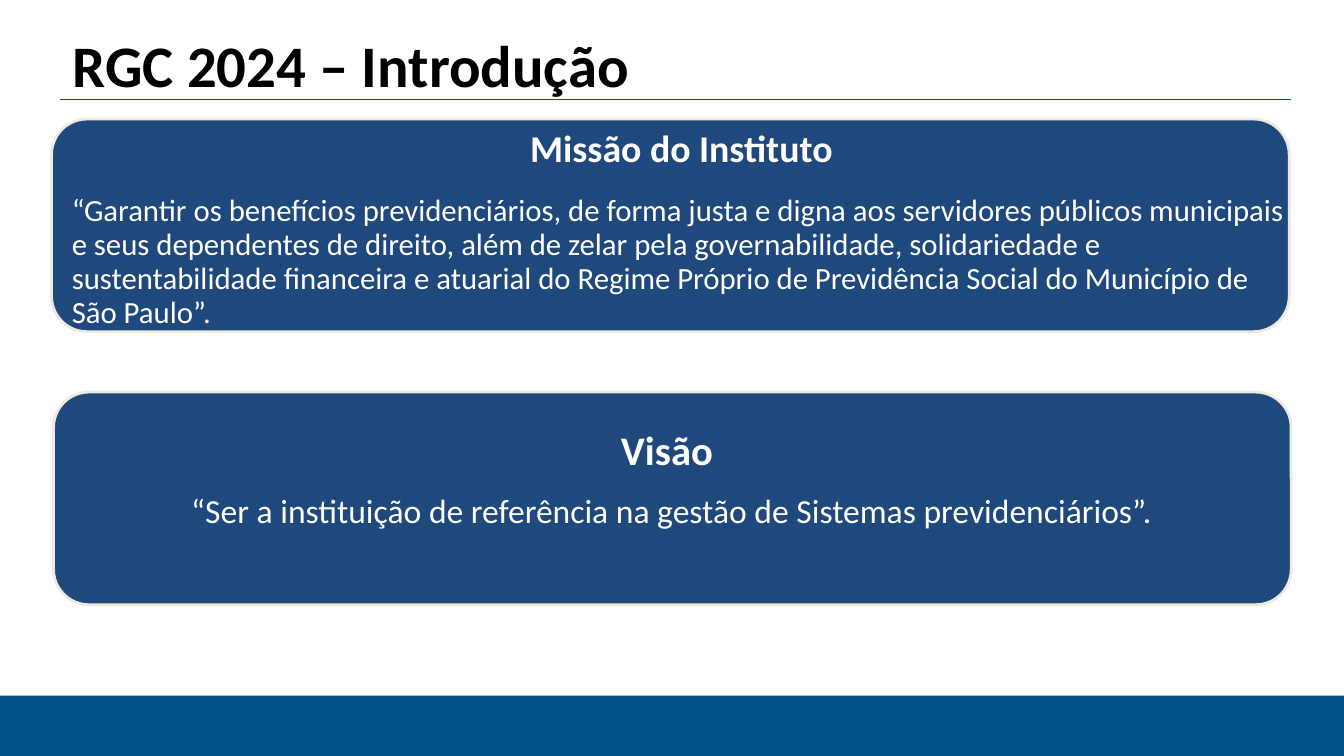
from lxml import etree
from pptx import Presentation, util as u
from pptx.dml.color import RGBColor
from pptx.enum import shapes, text
from pptx.oxml.ns import qn

COLORS = {"blue": "005386", "panel": "1F487C", "border": "EDEBE0",
          "white": "FFFFFF", "black": "000000"}
LEFT, CENTER = text.PP_ALIGN.LEFT, text.PP_ALIGN.CENTER
SHAPE = shapes.MSO_SHAPE


class Deck:
    """Hold the style and the current slide, and draw its elements."""

    def __init__(self, font="Calibri"):
        self.font = font
        self.prs = Presentation()
        self.prs.slide_width, self.prs.slide_height = u.Cm(33.87), u.Cm(19.05)
        self.s = self.prs.slides.add_slide(self.prs.slide_layouts[6])

    def color(self, name):
        return RGBColor.from_string(COLORS[name])

    def box(self, kind, at, fill, border=None):
        sp = self.s.shapes.add_shape(kind, *map(u.Cm, at))
        sp.shadow.inherit = False
        sp.fill.solid()
        sp.fill.fore_color.rgb = self.color(fill)
        if border:
            sp.line.color.rgb = self.color(border)
            sp.line.width = u.Pt(2)
        else:
            sp.line.fill.background()

    def rule(self, x1, x2, y, color):
        c = self.s.shapes.add_connector(
            shapes.MSO_CONNECTOR.STRAIGHT, u.Cm(x1), u.Cm(y), u.Cm(x2), u.Cm(y))
        c.line.color.rgb = self.color(color)
        c.line.width = u.Pt(0.75)
        etree.SubElement(c.element.spPr, qn("a:effectLst"))

    def text(self, at, lines, color="white", top=0.13, side=0, spacing=1.0):
        tf = self.s.shapes.add_textbox(*map(u.Cm, at)).text_frame
        tf.word_wrap = True
        tf.margin_left = tf.margin_right = u.Cm(side)
        tf.margin_top, tf.margin_bottom = u.Cm(top), 0
        for i, (words, size, bold, align, before) in enumerate(lines):
            p = tf.add_paragraph() if i else tf.paragraphs[0]
            p.text = words
            p.alignment = align
            p.line_spacing = spacing
            if before:
                p.space_before = u.Pt(before)
            f = p.runs[0].font
            f.name, f.size, f.bold = self.font, u.Pt(size), bold
            f.color.rgb = self.color(color)


def main():
    d = Deck()
    d.box(SHAPE.RECTANGLE, (0, 17.53, 33.87, 1.52), "blue")
    d.rule(1.52, 32.54, 2.51, "blue")
    d.text((1.83, 0.43, 22.3, 2.08),
           [("RGC 2024 – Introdução", 42, True, LEFT, 0)],
           color="black", top=0.3)
    for x, y in ((1.3, 3), (1.35, 9.88)):
        d.box(SHAPE.ROUNDED_RECTANGLE, (x, y, 31.19, 5.36), "panel", "border")
    d.text((1.81, 3.12, 30.73, 5.26), [
        ("Missão do Instituto", 27, True, CENTER, 0),
        ("“Garantir os benefícios previdenciários, de forma justa e digna aos "
         "servidores públicos municipais e seus dependentes de direito, além "
         "de zelar pela governabilidade, solidariedade e sustentabilidade "
         "financeira e atuarial do Regime Próprio de Previdência Social do "
         "Município de São Paulo”.", 22, False, LEFT, 16.6),
    ], spacing=0.92)
    d.text((1.47, 10.59, 30.91, 2.9), [
        ("Visão ", 29, True, CENTER, 0),
        ("“Ser a instituição de referência na gestão de Sistemas "
         "previdenciários”.", 24, False, CENTER, 11),
    ], side=0.25)
    d.prs.save("out.pptx")


if __name__ == "__main__":
    main()
